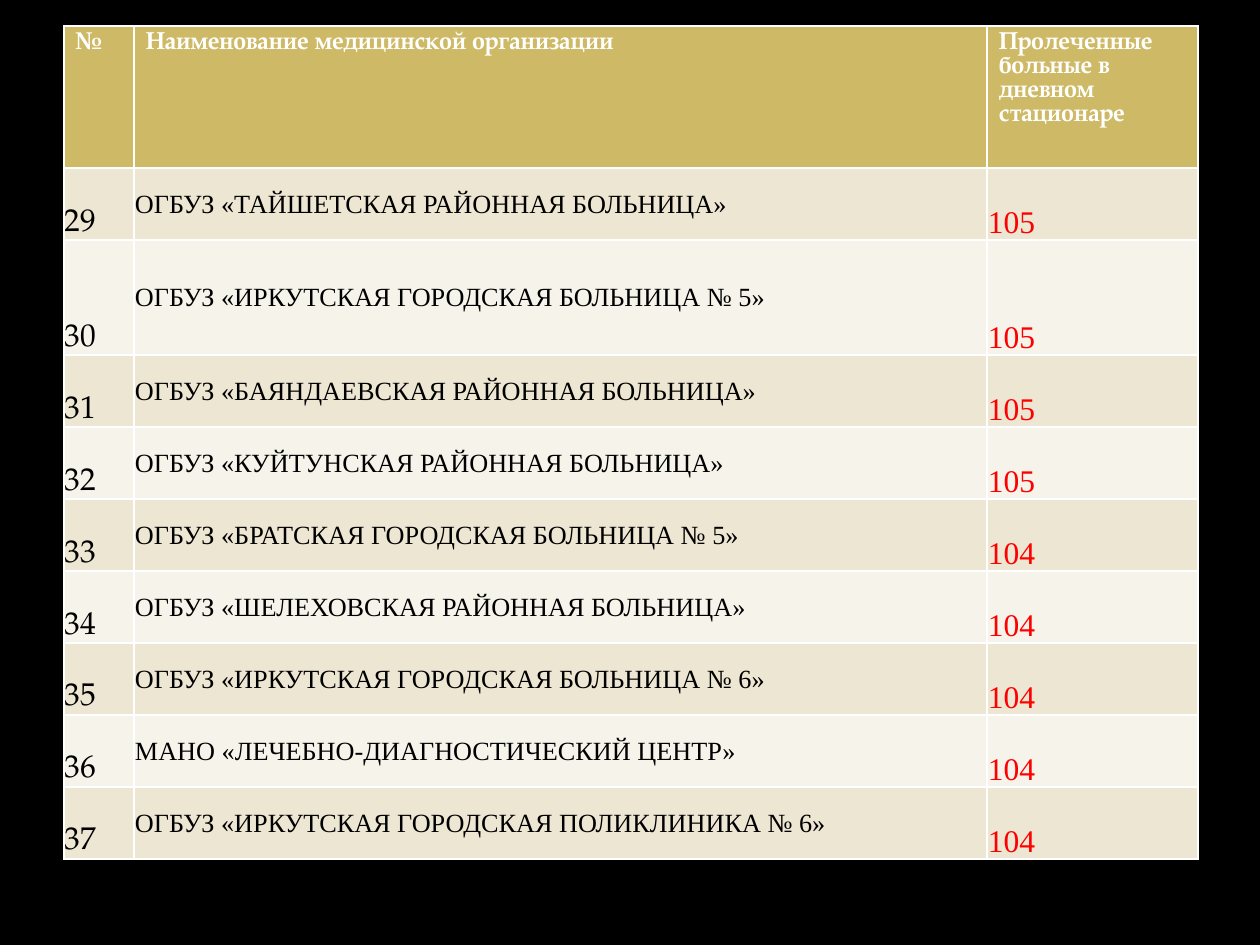
from dataclasses import dataclass

import lxml.etree
import pptx
import pptx.dml.color
import pptx.enum.text
import pptx.oxml.ns
import pptx.util

EMU_PER_PX = 914400 / 126
SERIF, TIMES = "TeX Gyre Pagella", "Times New Roman"
BLACK, WHITE, RED = "000000", "FFFFFF", "FF0000"
GOLD, BANDS = "CEB966", ("EDE6D3", "F6F3EA")
TOP, MIDDLE, BOTTOM = (
    pptx.enum.text.MSO_ANCHOR.TOP,
    pptx.enum.text.MSO_ANCHOR.MIDDLE,
    pptx.enum.text.MSO_ANCHOR.BOTTOM,
)


@dataclass(frozen=True)
class CellStyle:
    size: int
    typeface: str
    color: str
    anchor: pptx.enum.text.MSO_ANCHOR
    margins: tuple[int, int, int, int] = (1, 1, 1, 0)
    bold: bool = False
    line_points: float | None = None


@dataclass(frozen=True)
class Hospital:
    number: int
    name: str
    patients: int


HEADER_STYLE = CellStyle(14, SERIF, WHITE, TOP, (12, 6, 12, 6), True, 13.7)
COLUMN_STYLES = (
    CellStyle(18, SERIF, BLACK, BOTTOM),
    CellStyle(15, TIMES, BLACK, MIDDLE),
    CellStyle(18, TIMES, RED, BOTTOM),
)
HEADERS = ("№", "Наименование медицинской организации", "Пролеченные больные в дневном стационаре")
HOSPITALS = (
    Hospital(29, "ОГБУЗ «ТАЙШЕТСКАЯ РАЙОННАЯ БОЛЬНИЦА»", 105),
    Hospital(30, "ОГБУЗ «ИРКУТСКАЯ ГОРОДСКАЯ БОЛЬНИЦА № 5»", 105),
    Hospital(31, "ОГБУЗ «БАЯНДАЕВСКАЯ РАЙОННАЯ БОЛЬНИЦА»", 105),
    Hospital(32, "ОГБУЗ «КУЙТУНСКАЯ РАЙОННАЯ БОЛЬНИЦА»", 105),
    Hospital(33, "ОГБУЗ «БРАТСКАЯ ГОРОДСКАЯ БОЛЬНИЦА № 5»", 104),
    Hospital(34, "ОГБУЗ «ШЕЛЕХОВСКАЯ РАЙОННАЯ БОЛЬНИЦА»", 104),
    Hospital(35, "ОГБУЗ «ИРКУТСКАЯ ГОРОДСКАЯ БОЛЬНИЦА № 6»", 104),
    Hospital(36, "МАНО «ЛЕЧЕБНО-ДИАГНОСТИЧЕСКИЙ ЦЕНТР»", 104),
    Hospital(37, "ОГБУЗ «ИРКУТСКАЯ ГОРОДСКАЯ ПОЛИКЛИНИКА № 6»", 104),
)
COLUMN_WIDTHS = (70, 853, 211)
ROW_HEIGHTS = (142, 72, 115) + (72,) * 7


def px(length: int) -> pptx.util.Emu:
    return pptx.util.Emu(round(length * EMU_PER_PX))


def rgb(color: str) -> pptx.dml.color.RGBColor:
    return pptx.dml.color.RGBColor.from_string(color)


def add_borders(cell, color: str, points: int) -> None:
    qn = pptx.oxml.ns.qn
    properties = cell._tc.get_or_add_tcPr()
    for side in ("lnL", "lnR", "lnT", "lnB"):
        line = lxml.etree.SubElement(properties, qn(f"a:{side}"), w=str(pptx.util.Pt(points)))
        fill = lxml.etree.SubElement(line, qn("a:solidFill"))
        lxml.etree.SubElement(fill, qn("a:srgbClr"), val=color)


def fill_cell(cell, text: str, style: CellStyle, background: str) -> None:
    add_borders(cell, WHITE, 1)
    cell.fill.solid()
    cell.fill.fore_color.rgb = rgb(background)
    cell.vertical_anchor = style.anchor
    cell.margin_left, cell.margin_top, cell.margin_right, cell.margin_bottom = map(px, style.margins)
    cell.text = text
    paragraph = cell.text_frame.paragraphs[0]
    if style.line_points:
        paragraph.line_spacing = pptx.util.Pt(style.line_points)
    font = paragraph.font
    font.size = pptx.util.Pt(style.size)
    font.name = style.typeface
    font.bold = style.bold
    font.color.rgb = rgb(style.color)


def add_hospital_table(slide) -> None:
    shape = slide.shapes.add_table(
        len(ROW_HEIGHTS), len(COLUMN_WIDTHS),
        px(64), px(26), px(sum(COLUMN_WIDTHS)), px(sum(ROW_HEIGHTS)),
    )
    table = shape.table
    for column, width in zip(table.columns, COLUMN_WIDTHS):
        column.width = px(width)
    for row, height in zip(table.rows, ROW_HEIGHTS):
        row.height = px(height)

    # Header row
    for column_index, header in enumerate(HEADERS):
        fill_cell(table.cell(0, column_index), header, HEADER_STYLE, GOLD)

    # Hospital rows in alternating bands
    for index, hospital in enumerate(HOSPITALS):
        values = (str(hospital.number), hospital.name, str(hospital.patients))
        for column_index, (value, style) in enumerate(zip(values, COLUMN_STYLES)):
            fill_cell(table.cell(index + 1, column_index), value, style, BANDS[index % 2])


def main() -> None:
    presentation = pptx.Presentation()
    presentation.slide_width, presentation.slide_height = px(1260), px(945)
    slide = presentation.slides.add_slide(presentation.slide_layouts[6])

    # Background
    slide.background.fill.solid()
    slide.background.fill.fore_color.rgb = rgb(BLACK)

    add_hospital_table(slide)
    presentation.save("out.pptx")


if __name__ == "__main__":
    main()
